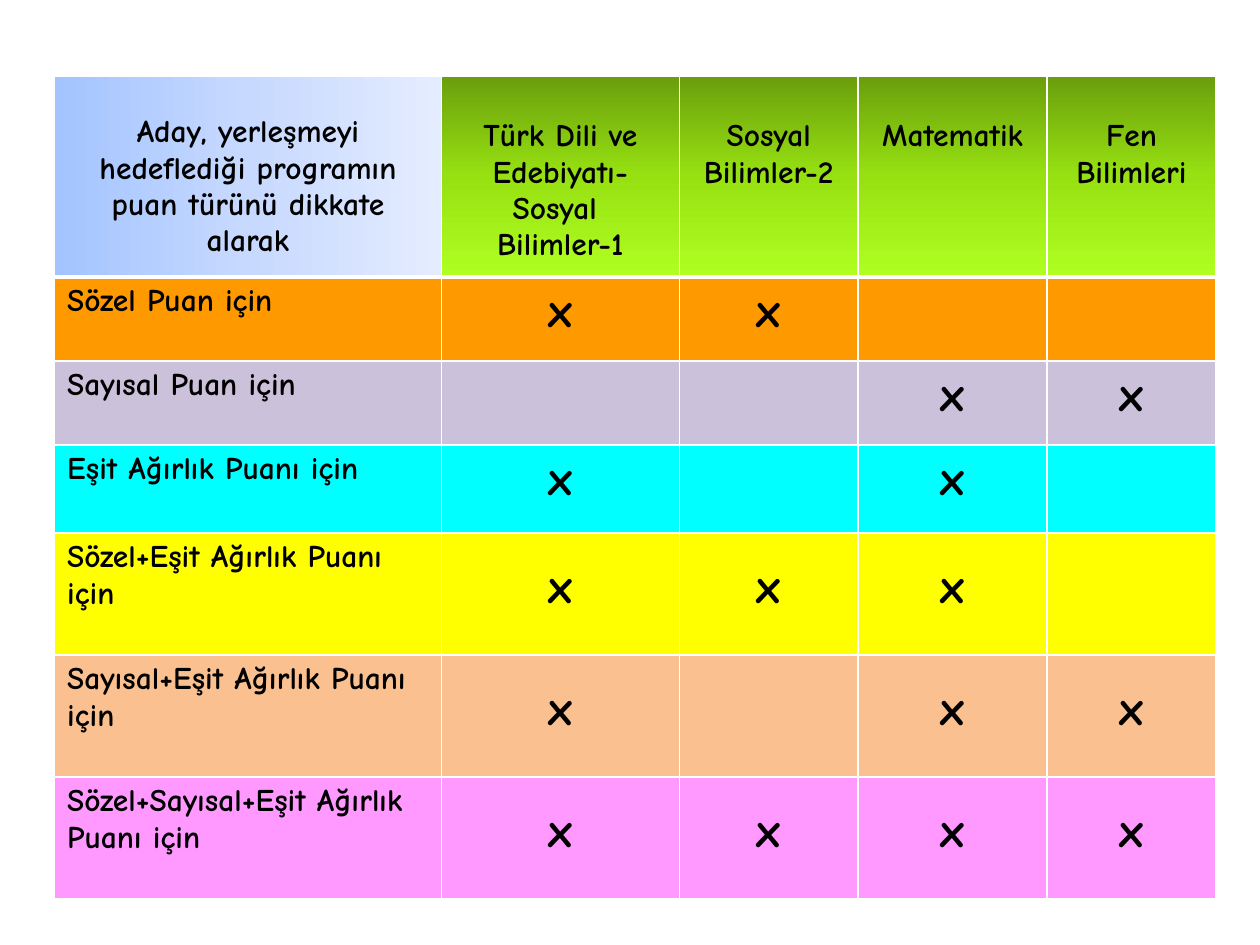
"""Builds a slide with a table of the tests required for each score type."""
import dataclasses

import pptx
import pptx.dml.color
import pptx.enum.text
import pptx.oxml
import pptx.oxml.ns
import pptx.util

Pt = pptx.util.Pt
ALIGN = pptx.enum.text.PP_ALIGN


@dataclasses.dataclass(frozen=True)
class Theme:
    font: str = "Comic Neue"
    ink: str = "000000"
    border: str = "FFFFFF"
    goal_gradient: tuple = ("A3C4FF", "C7D9FF", "E4ECFF")
    test_gradient: tuple = ("6A9E0C", "97E112", "B0FF21")
    label_size: float = 18
    mark_size: float = 28
    thin: float = 1
    thick: float = 3


THEME = Theme()
INSET = 3.6
GOAL_INSET = 22
TEST_INSET = 24.3
TALL_ROW_INSET = 15.1
COLUMN_WIDTHS = (221, 136, 102.2, 108, 96.4)
ROW_HEIGHTS = (115, 48, 48, 50.4, 69.7, 69.7, 69.7)

GOAL = "Aday, yerleşmeyi hedeflediği programın puan türünü dikkate alarak"
TESTS = (
    "Türk Dili ve Edebiyatı-Sosyal \nBilimler-1",
    "Sosyal Bilimler-2",
    "Matematik",
    "Fen Bilimleri",
)
SCORES = (
    ("Sözel Puan için", "FF9900", (1, 2), INSET),
    ("Sayısal Puan için", "CCC1DA", (3, 4), INSET),
    ("Eşit Ağırlık Puanı için", "00FFFF", (1, 3), INSET),
    ("Sözel+Eşit Ağırlık Puanı için", "FFFF00", (1, 2, 3), TALL_ROW_INSET),
    ("Sayısal+Eşit Ağırlık Puanı için", "FAC090", (1, 3, 4), TALL_ROW_INSET),
    ("Sözel+Sayısal+Eşit Ağırlık Puanı için", "FF99FF", (1, 2, 3, 4), TALL_ROW_INSET),
)


def rgb(code):
    return pptx.dml.color.RGBColor.from_string(code)


def write(cell, text, size=THEME.label_size, align=ALIGN.CENTER, inset=INSET):
    cell.margin_top = Pt(inset)
    cell.text_frame.text = text
    for paragraph in cell.text_frame.paragraphs:
        paragraph.alignment = align
        for run in paragraph.runs:
            run.font.name = THEME.font
            run.font.size = Pt(size)
            run.font.bold = True
            run.font.color.rgb = rgb(THEME.ink)


def append_xml(cell, xml):
    namespace = pptx.oxml.ns.nsdecls("a")
    properties = cell._tc.get_or_add_tcPr()
    properties.append(pptx.oxml.parse_xml(xml.replace(" ", f" {namespace} ", 1)))


def set_borders(cell, bottom=THEME.thin):
    for side in "LRTB":
        width = Pt(bottom if side == "B" else THEME.thin)
        append_xml(cell, f'<a:ln{side} w="{width}"><a:solidFill>'
                         f'<a:srgbClr val="{THEME.border}"/></a:solidFill></a:ln{side}>')


def fill_gradient(cell, colours, degrees):
    stops = "".join(
        f'<a:gs pos="{index * 50000}"><a:srgbClr val="{colour}"/></a:gs>'
        for index, colour in enumerate(colours)
    )
    append_xml(cell, f'<a:gradFill rotWithShape="1"><a:gsLst>{stops}</a:gsLst>'
                     f'<a:lin ang="{degrees * 60000}" scaled="0"/></a:gradFill>')


def add_grid(slide):
    frame = slide.shapes.add_table(
        len(ROW_HEIGHTS), len(COLUMN_WIDTHS), Pt(31.2), Pt(43.3),
        Pt(sum(COLUMN_WIDTHS)), Pt(sum(ROW_HEIGHTS)),
    )
    grid = frame.table
    grid.first_row = grid.horz_banding = False
    for column, width in zip(grid.columns, COLUMN_WIDTHS):
        column.width = Pt(width)
    for row, height in zip(grid.rows, ROW_HEIGHTS):
        row.height = Pt(height)
    return grid


def fill_header(cells):
    goal, *tests = cells
    write(goal, GOAL, inset=GOAL_INSET)
    set_borders(goal, bottom=THEME.thick)
    fill_gradient(goal, THEME.goal_gradient, 0)
    for cell, test in zip(tests, TESTS):
        write(cell, test, inset=TEST_INSET)
        set_borders(cell, bottom=THEME.thick)
        fill_gradient(cell, THEME.test_gradient, 90)


def fill_score(cells, label, colour, required, mark_inset):
    for index, cell in enumerate(cells):
        set_borders(cell)
        cell.fill.solid()
        cell.fill.fore_color.rgb = rgb(colour)
        if index == 0:
            write(cell, label, align=ALIGN.LEFT)
        elif index in required:
            write(cell, "x", size=THEME.mark_size, inset=mark_inset)


def main():
    deck = pptx.Presentation()
    deck.slide_width, deck.slide_height = Pt(720), Pt(540)
    slide = deck.slides.add_slide(deck.slide_layouts[6])
    header, *score_rows = add_grid(slide).rows
    fill_header(header.cells)
    for row, score in zip(score_rows, SCORES):
        fill_score(row.cells, *score)
    deck.save("out.pptx")


if __name__ == "__main__":
    main()
